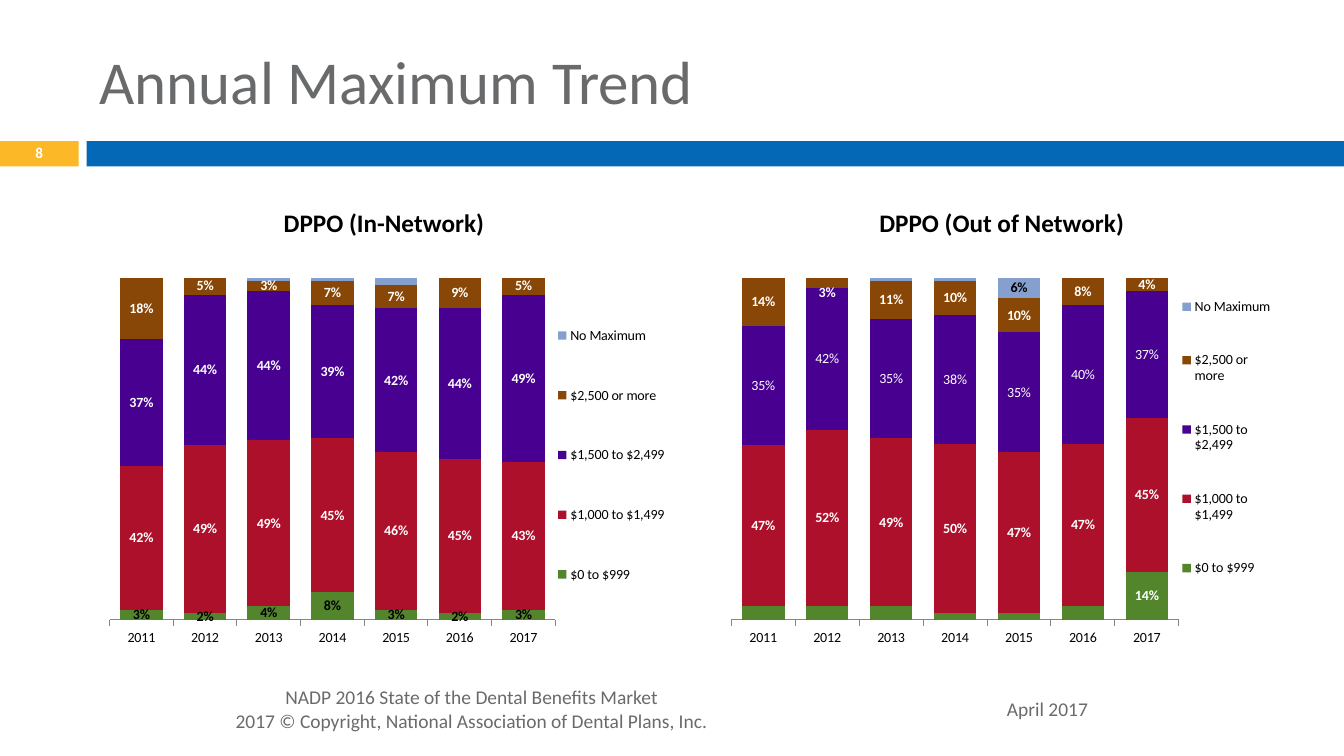
from lxml import etree
from pptx import Presentation
from pptx.chart.data import CategoryChartData
from pptx.dml.color import RGBColor
from pptx.enum.chart import XL_CHART_TYPE, XL_LEGEND_POSITION, XL_TICK_MARK
from pptx.enum.shapes import MSO_SHAPE
from pptx.enum.text import MSO_ANCHOR, PP_ALIGN
from pptx.oxml.ns import qn
from pptx.util import Inches, Pt

GOLD = RGBColor(0xFD, 0xB8, 0x27)
BLUE = RGBColor(0x04, 0x68, 0xB6)
GREY = RGBColor(0x69, 0x6A, 0x6C)
AXIS_GREY = RGBColor(0x86, 0x86, 0x86)
WHITE = RGBColor(0xFF, 0xFF, 0xFF)
BLACK = RGBColor(0, 0, 0)
GREEN = RGBColor(0x52, 0x85, 0x2C)
RED = RGBColor(0xAC, 0x10, 0x2A)
PURPLE = RGBColor(0x47, 0x00, 0x8F)
BROWN = RGBColor(0x88, 0x47, 0x06)
PALE_BLUE = RGBColor(0x85, 0xA0, 0xCE)

# Content: series are percentages per year
FONT = "Calibri"
YEARS = ["2011", "2012", "2013", "2014", "2015", "2016", "2017"]
BANDS = [("$0 to $999", GREEN), ("$1,000 to $1,499", RED), ("$1,500 to $2,499", PURPLE),
         ("$2,500 or more", BROWN), ("No Maximum", PALE_BLUE)]
ALL = range(len(YEARS))

# Labels per band: (labelled years, colour, bold)
NETWORKS = [
    {"title": "DPPO (In-Network)", "left": 0.89, "width": 5.78,
     "percents": [[3, 2, 4, 8, 3, 2, 3], [42, 49, 49, 45, 46, 45, 43],
                  [37, 44, 44, 39, 42, 44, 49], [18, 5, 3, 7, 7, 9, 5],
                  [0, 0, 1, 1, 2, 0, 0]],
     "labels": [(ALL, BLACK, True), (ALL, WHITE, True), (ALL, WHITE, True),
                (ALL, WHITE, True), ([], BLACK, True)],
     "title_at": (0.325, 0.05), "plot_at": (0.034, 0.203, 0.765, 0.679),
     "legend_at": (0.795, 0.215, 0.2, 0.68), "nudged": None},
    {"title": "DPPO (Out of Network)", "left": 7.06, "width": 5.67,
     "percents": [[4, 4, 4, 2, 2, 4, 14], [47, 52, 49, 50, 47, 47, 45],
                  [35, 42, 35, 38, 35, 40, 37], [14, 3, 11, 10, 10, 8, 4],
                  [0, 0, 1, 1, 6, 0, 0]],
     "labels": [([6], WHITE, True), (ALL, WHITE, True), (ALL, WHITE, False),
                (ALL, WHITE, True), ([4], BLACK, True)],
     "title_at": (0.285, 0.05), "plot_at": (0.034, 0.203, 0.783, 0.679),
     "legend_at": (0.815, 0.17, 0.17, 0.7), "nudged": (3, 1, (0, 0.02))},
]
CHART_TOP, CHART_HEIGHT = 1.74, 5

# Bars: left, top, width, height, colour
BARS = [(0, 1.4, 0.78, 0.25, GOLD), (0.86, 1.4, 12.47, 0.25, BLUE)]

# Texts: lines, box, alignment, line spacing, font
TEXTS = [
    (["Annual Maximum Trend"], (0.89, 0.25, 11.89, 1.08), PP_ALIGN.LEFT, 1,
     {"size": Pt(43.5)}, GREY),
    (["April 2017"], (8.89, 6.83, 2, 0.4), PP_ALIGN.RIGHT, 1, {"size": Pt(13.9)}, GREY),
    (["8"], (0, 1.39, 0.78, 0.27), PP_ALIGN.CENTER, 0.8,
     {"size": Pt(10.8), "bold": True}, WHITE),
    (["NADP 2016 State of the Dental Benefits Market",
      "2017 © Copyright, National Association of Dental Plans, Inc."],
     (0.89, 6.83, 7.9, 0.4), PP_ALIGN.CENTER, 1, {"size": Pt(13.9)}, GREY),
]
FOOTER_INDENT = Inches(0.32)


def set_font(font, color, **values):
    for name, value in {"name": FONT, **values}.items():
        setattr(font, name, value)
    font.color.rgb = color


def place(element, index, shares, modes=()):
    """Give a chart part its place, as shares of the chart."""
    for old in element.findall(qn("c:layout")):
        element.remove(old)
    layout = etree.Element(qn("c:layout"))
    manual = etree.SubElement(layout, qn("c:manualLayout"))
    for tag, value in [*modes, *zip("xywh", shares)]:
        etree.SubElement(manual, qn("c:" + tag)).set("val", str(value))
    element.insert(index, layout)


EDGES = [("xMode", "edge"), ("yMode", "edge")]


def add_text(slide, lines, box, align, spacing, font, color):
    frame = slide.shapes.add_textbox(*map(Inches, box)).text_frame
    frame.word_wrap = True
    frame.vertical_anchor = MSO_ANCHOR.MIDDLE
    frame.text = "\n".join(lines)
    for paragraph in frame.paragraphs:
        paragraph.alignment = align
        paragraph.line_spacing = spacing
        set_font(paragraph.runs[0].font, color, **font)
    return frame


def add_network_chart(slide, network):
    data = CategoryChartData(number_format="0%")
    data.categories = YEARS
    for (band, _), percents in zip(BANDS, network["percents"]):
        data.add_series(band, [percent / 100 for percent in percents])
    chart = slide.shapes.add_chart(
        XL_CHART_TYPE.COLUMN_STACKED_100, Inches(network["left"]), Inches(CHART_TOP),
        Inches(network["width"]), Inches(CHART_HEIGHT), data).chart
    set_font(chart.font, BLACK, size=Pt(10))

    # Title and legend
    chart.has_title = True
    heading = chart.chart_title.text_frame
    heading.text = network["title"]
    set_font(heading.paragraphs[0].runs[0].font, BLACK, size=Pt(18), bold=True)
    chart.chart_title.include_in_layout = False
    place(chart.chart_title._element, 1, network["title_at"], EDGES)
    chart.has_legend = True
    chart.legend.position = XL_LEGEND_POSITION.RIGHT
    chart.legend.include_in_layout = False
    place(chart.legend._element, 1, network["legend_at"], EDGES)

    # Axes and plot
    chart.value_axis.visible = False
    chart.value_axis.has_major_gridlines = False
    chart.value_axis.maximum_scale = 1
    chart.category_axis.major_tick_mark = XL_TICK_MARK.OUTSIDE
    chart.category_axis.format.line.color.rgb = AXIS_GREY
    plot = chart.plots[0]
    for name, value in {"gap_width": 50, "overlap": 100, "vary_by_categories": False}.items():
        setattr(plot, name, value)
    place(plot._element.getparent(), 0, network["plot_at"],
          [("layoutTarget", "inner"), *EDGES])

    # Series colours and labels
    for series, (_, fill), (years, color, bold) in zip(plot.series, BANDS, network["labels"]):
        series.format.fill.solid()
        series.format.fill.fore_color.rgb = fill
        if years is ALL:
            series.data_labels.show_value = True
            set_font(series.data_labels.font, color, size=Pt(10), bold=bold)
        elif years:
            series.data_labels.show_value = False
            for year in years:
                set_font(series.points[year].data_label.font, color, size=Pt(10), bold=bold)
    if network["nudged"]:
        band, year, offset = network["nudged"]
        series = plot.series[band]
        set_font(series.points[year].data_label.font, WHITE, size=Pt(10), bold=True)
        place(series._element.xpath("c:dLbls/c:dLbl")[0], 1, offset)


def main():
    deck = Presentation()
    deck.slide_width, deck.slide_height = Inches(13.33), Inches(7.5)
    slide = deck.slides.add_slide(deck.slide_layouts[6])

    for *box, color in BARS:
        bar = slide.shapes.add_shape(MSO_SHAPE.RECTANGLE, *map(Inches, box))
        bar.shadow.inherit = False
        bar.fill.solid()
        bar.fill.fore_color.rgb = color
        bar.line.fill.background()

    for text in TEXTS:
        footer = add_text(slide, *text)
    # The first footer line sits a little left of centre
    footer.paragraphs[0]._p.get_or_add_pPr().set("marR", str(FOOTER_INDENT))

    for network in NETWORKS:
        add_network_chart(slide, network)
    deck.save("out.pptx")


if __name__ == "__main__":
    main()
